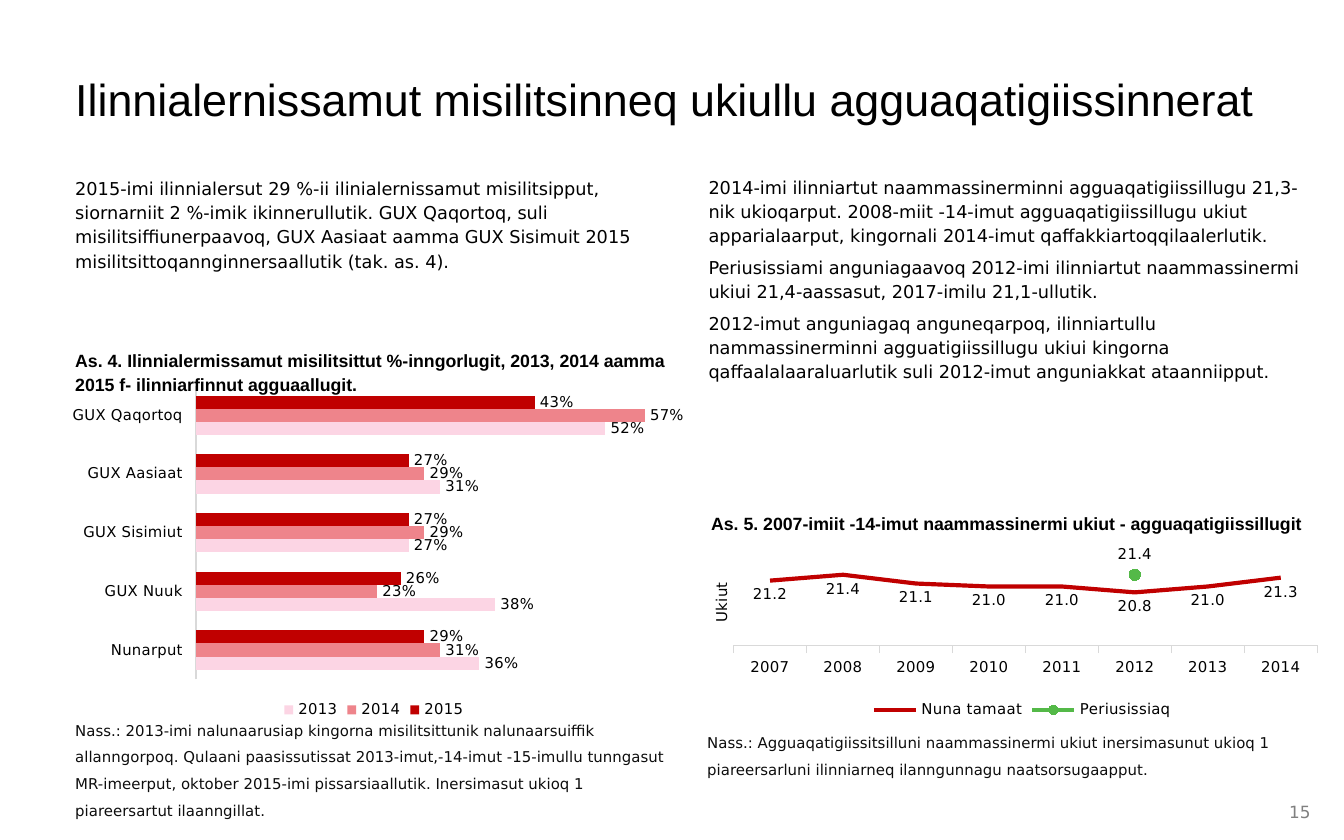
from lxml.etree import SubElement
from pptx import Presentation
from pptx.chart.data import CategoryChartData
from pptx.dml.color import RGBColor
from pptx.enum.chart import XL_CHART_TYPE, XL_LABEL_POSITION, XL_LEGEND_POSITION
from pptx.enum.chart import XL_MARKER_STYLE, XL_TICK_LABEL_POSITION, XL_TICK_MARK
from pptx.enum.text import MSO_ANCHOR, PP_ALIGN
from pptx.oxml.ns import qn
from pptx.util import Inches, Pt

WIDE, HIGH = Inches(10), Inches(6.25)
SANS, HEAD = "DejaVu Sans", "Arial"
RED, PINK, PALE, GREEN = "C00000", "EE848B", "FCD5E4", "54B948"
BLACK, DARK, GREY, RULE = "000000", "0D0D0D", "808080", "D9D9D9"


def color(code):
    """Turn a hex string into a colour."""
    return RGBColor.from_string(code)


def part(box, x, y, w, h):
    """Place a part inside a box, given in percent of that box."""
    left, top, wide, high = box
    return (int(left + wide * x / 100), int(top + high * y / 100),
            int(wide * w / 100), int(high * h / 100))


def style(font, size, name=SANS, code=BLACK, bold=False):
    """Set the look of a font."""
    font.size, font.name, font.bold = Pt(size), name, bold
    font.color.rgb = color(code)


def write(slide, box, lines, size, name=SANS, code=BLACK, bold=False, lead=1.14):
    """Add a text box with one paragraph for each line."""
    frame = slide.shapes.add_textbox(*box).text_frame
    frame.word_wrap = True
    frame.margin_left = frame.margin_right = 0
    frame.margin_top = frame.margin_bottom = 0
    frame.text = "\n".join(lines)
    for rank, para in enumerate(frame.paragraphs):
        para.line_spacing = lead
        para.space_before = Pt(2 if rank else 0)
        para.space_after = Pt(2)
        for run in para.runs:
            style(run.font, size, name, code, bold)
    return frame


def layout(chart, x, y, w, h):
    """Fix the inner plot area as shares of the chart."""
    area = chart._chartSpace.chart.plotArea
    for old in area.findall(qn("c:layout")):
        area.remove(old)
    outer = SubElement(area, qn("c:layout"))
    area.insert(0, outer)
    manual = SubElement(outer, qn("c:manualLayout"))
    rules = {"layoutTarget": "inner", "xMode": "edge", "yMode": "edge",
             "x": x, "y": y, "w": w, "h": h}
    for tag, value in rules.items():
        SubElement(manual, qn("c:" + tag)).set("val", str(value))


def plot(slide, box, kind, cats, rows, low, high, form):
    """Add a chart with a hidden value axis and a legend below."""
    data = CategoryChartData(number_format=form)
    data.categories = cats
    for name, values in rows:
        data.add_series(name, values)
    chart = slide.shapes.add_chart(kind, *box, data).chart
    style(chart.font, 8)
    chart.has_title = False
    chart.has_legend = True
    chart.legend.position = XL_LEGEND_POSITION.BOTTOM
    chart.legend.include_in_layout = False
    style(chart.legend.font, 8)
    scale, axis = chart.value_axis, chart.category_axis
    scale.minimum_scale, scale.maximum_scale = low, high
    scale.has_major_gridlines = False
    scale.visible = False
    axis.has_major_gridlines = False
    axis.tick_label_position = XL_TICK_LABEL_POSITION.LOW
    axis.format.line.color.rgb = color(RULE)
    axis.format.line.width = Pt(0.75)
    style(axis.tick_labels.font, 8)
    chart.plots[0].vary_by_categories = False
    return chart


def label(series, place, form):
    """Show the values of a series."""
    tags = series.data_labels
    tags.show_value = True
    tags.number_format, tags.number_format_is_linked = form, False
    tags.position = place
    style(tags.font, 8)


def bars(slide, box):
    """Draw the share of pupils who left, by school and year."""
    cats = ["GUX Qaqortoq", "GUX Aasiaat", "GUX Sisimiut", "GUX Nuuk", "Nunarput"]
    rows = [("2015", (0.43, 0.27, 0.27, 0.26, 0.29)),
            ("2014", (0.57, 0.29, 0.29, 0.23, 0.31)),
            ("2013", (0.52, 0.31, 0.27, 0.38, 0.36))]
    chart = plot(slide, box, XL_CHART_TYPE.BAR_CLUSTERED, cats, rows, 0, 0.6, "0%")
    layout(chart, 0.21, 0.02, 0.77, 0.85)
    chart.category_axis.reverse_order = True
    chart.category_axis.major_tick_mark = XL_TICK_MARK.NONE
    chart.plots[0].gap_width, chart.plots[0].overlap = 150, 0
    for series, code in zip(chart.plots[0].series, (RED, PINK, PALE)):
        series.format.fill.solid()
        series.format.fill.fore_color.rgb = color(code)
        label(series, XL_LABEL_POSITION.OUTSIDE_END, "0%")


def lines(slide, box):
    """Draw the mean age at graduation and its target."""
    form = "#,##0.0"
    cats = [str(year) for year in range(2007, 2015)]
    rows = [("Nuna tamaat", (21.2, 21.4, 21.1, 21, 21, 20.8, 21, 21.3)),
            ("Periusissiaq", [None] * 5 + [21.4] + [None] * 2)]
    chart = plot(slide, box, XL_CHART_TYPE.LINE_MARKERS, cats, rows, 19, 23, form)
    layout(chart, 0.04, 0.08, 0.93, 0.55)
    chart.category_axis.major_tick_mark = XL_TICK_MARK.OUTSIDE
    chart.value_axis.major_unit = 5
    title = chart.value_axis.axis_title.text_frame
    title.text = "Ukiut"
    title._txBody.bodyPr.set("rot", "-5400000")
    title._txBody.bodyPr.set("vert", "horz")
    style(title.paragraphs[0].runs[0].font, 8)
    places = (XL_LABEL_POSITION.BELOW, XL_LABEL_POSITION.ABOVE)
    for series, code, place in zip(chart.plots[0].series, (RED, GREEN), places):
        series.smooth = False
        series.format.line.color.rgb = color(code)
        series.format.line.width = Pt(2.25)
        label(series, place, form)
    mean, goal = chart.plots[0].series
    mean.marker.style = XL_MARKER_STYLE.NONE
    goal.marker.style, goal.marker.size = XL_MARKER_STYLE.CIRCLE, 6
    goal.marker.format.fill.solid()
    goal.marker.format.fill.fore_color.rgb = color(GREEN)
    goal.marker.format.line.color.rgb = color(GREEN)


def left(slide, box):
    """Fill the left column: dropouts."""
    bars(slide, part(box, 0, 31.4, 99.8, 51.4))
    write(slide, part(box, 1.3, 1, 97.8, 24.8), [
        "2015-imi ilinnialersut 29 %-ii ilinialernissamut misilitsipput, siornarniit 2 %-imik "
        "ikinnerullutik. GUX Qaqortoq, suli misilitsiffiunerpaavoq, GUX Aasiaat aamma GUX "
        "Sisimuit 2015 misilitsittoqannginnersaallutik (tak. as. 4)."], 9.5)
    write(slide, part(box, 1.3, 26.6, 97.8, 7), [
        "As. 4. Ilinnialermissamut misilitsittut %-inngorlugit, 2013, 2014 aamma 2015 "
        "f- ilinniarfinnut agguaallugit."], 9.5, HEAD, bold=True)
    write(slide, part(box, 1.3, 81, 95.9, 12), [
        "Nass.: 2013-imi nalunaarusiap kingorna misilitsittunik nalunaarsuiffik allanngorpoq. "
        "Qulaani paasissutissat 2013-imut,-14-imut -15-imullu tunngasut MR-imeerput, oktober "
        "2015-imi pissarsiaallutik. Inersimasut ukioq 1 piareersartut ilaanngillat."],
        8, code=DARK, lead=1.5)


def right(slide, box):
    """Fill the right column: age at graduation."""
    lines(slide, part(box, 1.5, 51, 97.3, 31.8))
    write(slide, part(box, 1.5, 0.8, 93.8, 48.4), [
        "2014-imi ilinniartut naammassinerminni agguaqatigiissillugu 21,3-nik ukioqarput. "
        "2008-miit -14-imut agguaqatigiissillugu ukiut apparialaarput, kingornali 2014-imut "
        "qaffakkiartoqqilaalerlutik.",
        "Periusissiami anguniagaavoq 2012-imi ilinniartut naammassinermi ukiui 21,4-aassasut, "
        "2017-imilu 21,1-ullutik.",
        "2012-imut anguniagaq anguneqarpoq, ilinniartullu nammassinerminni agguatigiissillugu "
        "ukiui kingorna qaffaalalaaraluarlutik suli 2012-imut anguniakkat ataanniipput."], 9.5)
    write(slide, part(box, 1.9, 50.8, 93.8, 3.4), [
        "As. 5. 2007-imiit -14-imut naammassinermi ukiut - agguaqatigiissillugit"],
        9.5, HEAD, bold=True)
    write(slide, part(box, 1.3, 82.8, 91.9, 10.2), [
        "Nass.: Agguaqatigiissitsilluni naammassinermi ukiut inersimasunut ukioq 1 "
        "piareersarluni ilinniarneq ilanngunnagu naatsorsugaapput."], 8, code=DARK, lead=1.5)


def frame(slide, box):
    """Add the title and the page number."""
    write(slide, part(box, 5.6, 8.6, 97.8, 9.4),
          ["Ilinnialernissamut misilitsinneq ukiullu agguaqatigiissinnerat"], 24, HEAD, lead=1)
    page = write(slide, part(box, 95, 95.7, 2.5, 1.4), ["15"], 9, code=GREY, lead=1.2)
    page.vertical_anchor = MSO_ANCHOR.MIDDLE
    page.paragraphs[0].alignment = PP_ALIGN.RIGHT


def main():
    """Build and save the slide."""
    deck = Presentation()
    deck.slide_width, deck.slide_height = WIDE, HIGH
    slide = deck.slides.add_slide(deck.slide_layouts[6])
    full = (0, 0, WIDE, HIGH)
    frame(slide, full)
    left(slide, part(full, 5, 20, 46, 80))
    right(slide, part(full, 52, 20, 48, 80))
    deck.save("out.pptx")


if __name__ == "__main__":
    main()
